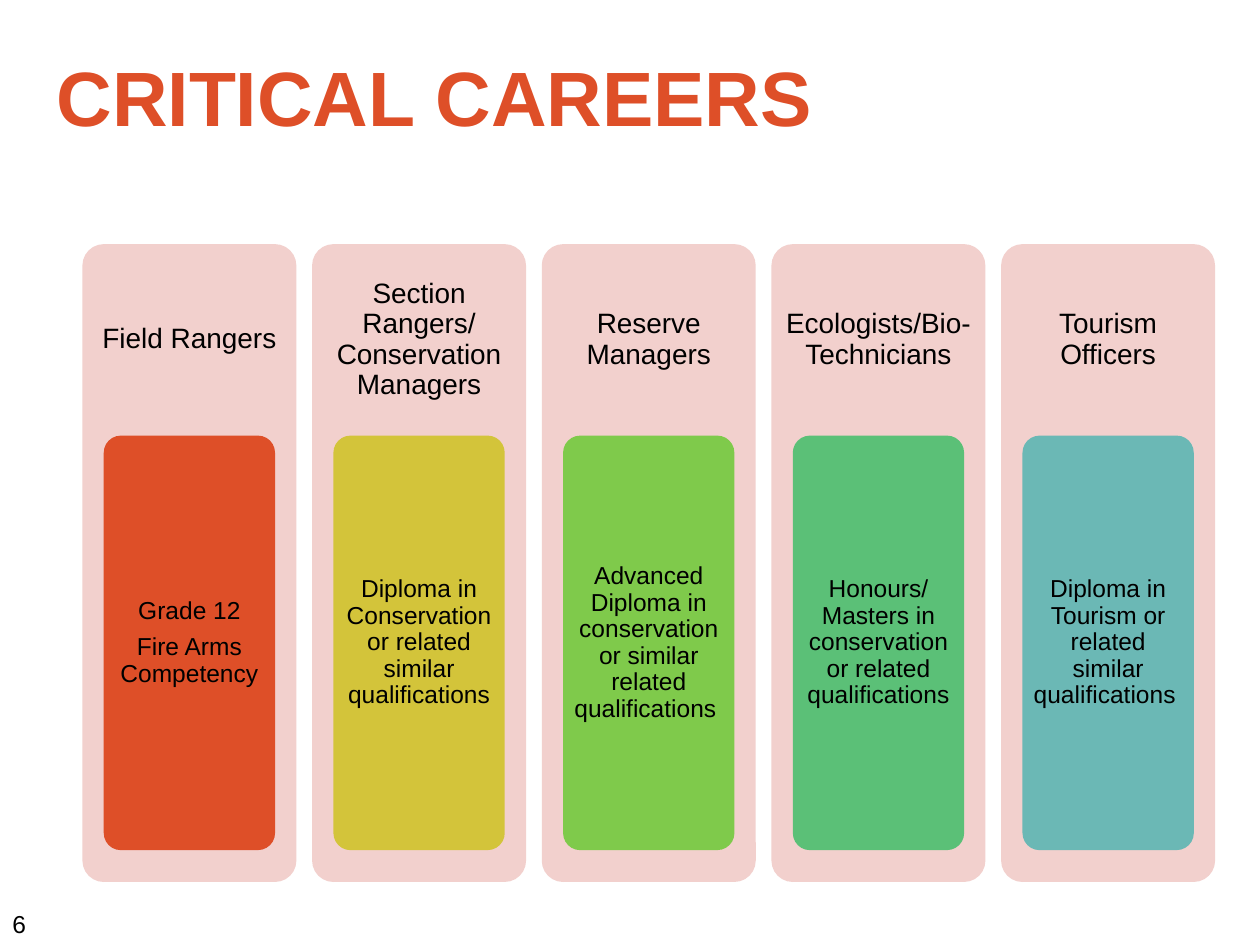
"""Build the Critical Careers slide with five career cards and their qualifications."""
from dataclasses import dataclass

import pptx
import pptx.dml.color
import pptx.enum.shapes
import pptx.enum.text
import pptx.util

Pt = pptx.util.Pt
RGB = pptx.dml.color.RGBColor.from_string
ANCHOR = pptx.enum.text.MSO_ANCHOR
ALIGN = pptx.enum.text.PP_ALIGN


@dataclass(frozen=True)
class Theme:
    font: str = "Arial"
    title: str = "DE4F28"
    text: str = "000000"
    card: str = "F2D0CD"
    accents: tuple = ("DE4F28", "D3C43A", "7FCA4B", "5BC077", "6BB8B5")
    title_size: float = 44
    heading_size: float = 16
    body_size: float = 14


class Deck:
    def __init__(self, theme):
        self.theme = theme
        self.prs = pptx.Presentation()
        self.prs.slide_width, self.prs.slide_height = Pt(720), Pt(540)
        self.s = self.prs.slides.add_slide(self.prs.slide_layouts[6])

    def panel(self, x, y, w, h, color):
        kind = pptx.enum.shapes.MSO_SHAPE.ROUNDED_RECTANGLE
        sp = self.s.shapes.add_shape(kind, Pt(x), Pt(y), Pt(w), Pt(h))
        sp.adjustments[0] = 0.1
        sp.shadow.inherit = False
        sp.fill.solid()
        sp.fill.fore_color.rgb = RGB(color)
        sp.line.fill.background()

    def text(self, x, y, w, h, lines, size, color=None, bold=False,
             anchor=ANCHOR.MIDDLE, align=ALIGN.LEFT, inset=(7.2, 3.6), spacing=1, after=0):
        tf = self.s.shapes.add_textbox(Pt(x), Pt(y), Pt(w), Pt(h)).text_frame
        tf.word_wrap = True
        tf.vertical_anchor = anchor
        tf.margin_left = tf.margin_right = Pt(inset[0])
        tf.margin_top = tf.margin_bottom = Pt(inset[1])
        for i, line in enumerate(lines):
            p = tf.add_paragraph() if i else tf.paragraphs[0]
            p.alignment, p.line_spacing, p.space_after = align, spacing, Pt(after)
            r = p.add_run()
            r.text = line
            r.font.name, r.font.size, r.font.bold = self.theme.font, Pt(size), bold
            r.font.color.rgb = RGB(color or self.theme.text)

    def career(self, x, heading, lines, accent):
        top, width, head_h = 139.5, 122.3, 109.4
        inner_x, inner_y, inner_w, inner_h = x + 12.2, top + head_h, 97.9, 236.9
        pad = 2.9
        style = dict(align=ALIGN.CENTER, spacing=0.9, after=5.6)
        self.panel(x, top, width, 364.5, self.theme.card)
        self.text(x, top, width, head_h, [heading], self.theme.heading_size,
                  inset=(4.8, 4.8), **style)
        self.panel(inner_x, inner_y, inner_w, inner_h, accent)
        self.text(inner_x + pad, inner_y + pad, inner_w - 2 * pad, inner_h - 2 * pad,
                  lines, self.theme.body_size, inset=(2.8, 2.1), **style)


CAREERS = [
    ("Field Rangers", ["Grade 12", "Fire Arms Competency"]),
    ("Section Rangers/ Conservation Managers",
     ["Diploma in Conservation or related similar qualifications"]),
    ("Reserve Managers",
     ["Advanced Diploma in conservation or similar related qualifications "]),
    ("Ecologists/Bio-Technicians",
     ["Honours/ Masters in conservation or related qualifications"]),
    ("Tourism Officers", ["Diploma in Tourism or related similar qualifications "]),
]


def main():
    theme = Theme()
    deck = Deck(theme)
    deck.text(25.2, 9.4, 669, 90.7, ["CRITICAL CAREERS"], theme.title_size,
              color=theme.title, bold=True)
    deck.text(0, 504, 46.8, 36, ["6"], theme.body_size, anchor=ANCHOR.BOTTOM)
    for i, ((heading, lines), accent) in enumerate(zip(CAREERS, theme.accents)):
        deck.career(47.1 + i * 131.25, heading, lines, accent)
    deck.prs.save("out.pptx")


if __name__ == "__main__":
    main()
